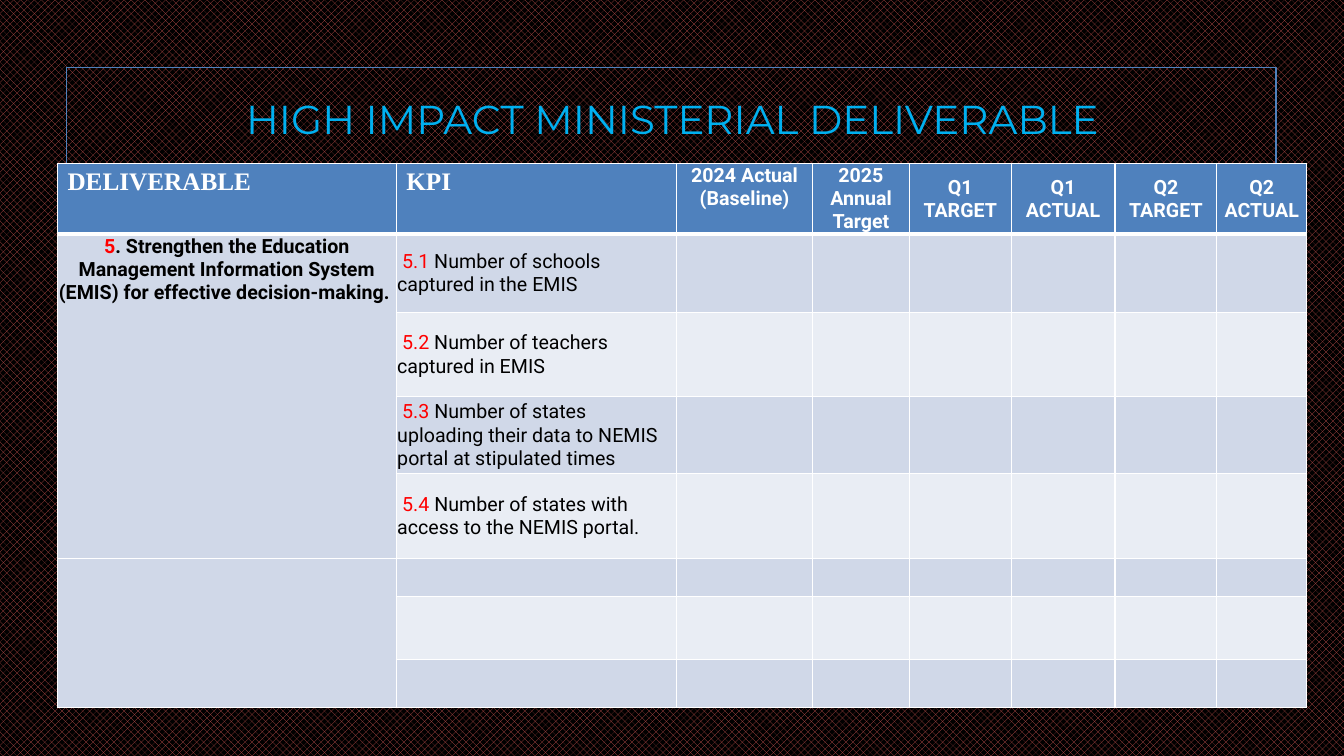
from lxml.etree import SubElement
from pptx import Presentation
from pptx.dml.color import RGBColor
from pptx.enum.dml import MSO_PATTERN
from pptx.enum.shapes import MSO_SHAPE
from pptx.enum.text import MSO_ANCHOR, PP_ALIGN
from pptx.oxml.ns import qn
from pptx.util import Inches, Pt

BLUE, WHITE, BLACK, RED = "4F81BD", "FFFFFF", "000000", "FF0000"
BANDS = ["E9EDF4", "D0D8E8"]
COLUMN_WIDTHS = [3.36, 2.78, 1.35, 0.96, 1.01, 1.03, 1.01, 0.89]
ROW_HEIGHTS = [0.7, 0.78, 0.83, 0.77, 0.84, 0.38, 0.62, 0.48]
MAIN_HEADINGS = ["DELIVERABLE", "KPI"]
PERIOD_HEADINGS = ["2024 Actual (Baseline)", "2025 Annual Target",
                   "Q1 TARGET", "Q1 ACTUAL", "Q2 TARGET", "Q2 ACTUAL"]
KPIS = [
    ("5.1", " Number of schools captured in the EMIS"),
    ("5.2", " Number of teachers captured in EMIS"),
    ("5.3 ", "Number of states uploading their data to NEMIS portal at stipulated times"),
    ("5.4 ", "Number of states with access to the NEMIS portal."),
]


def color(value):
    return RGBColor.from_string(value)


def add_run(paragraph, text, size, font, tint, bold=False):
    run = paragraph.add_run()
    run.text = text
    run.font.size = Pt(size)
    run.font.name = font
    run.font.bold = bold
    run.font.color.rgb = color(tint)


def paint_background(slide):
    fill = slide.background.fill
    fill.patterned()
    fill.pattern = MSO_PATTERN.PERCENT_50
    fill.fore_color.rgb = color("C0504D")
    fill.back_color.rgb = color(BLACK)


def add_frame(slide):
    frame = slide.shapes.add_shape(MSO_SHAPE.RECTANGLE, Inches(0.66), Inches(0.67),
                                   Inches(12), Inches(6.17))
    frame.shadow.inherit = False
    frame.fill.background()
    frame.line.color.rgb = color(BLUE)
    frame.line.width = Pt(1.25)


def set_title(slide, text):
    title = slide.shapes.title
    title.left, title.top = Inches(1.42), Inches(0.73)
    title.width, title.height = Inches(10.5), Inches(0.89)
    title.text_frame.vertical_anchor = MSO_ANCHOR.MIDDLE
    paragraph = title.text_frame.paragraphs[0]
    paragraph.alignment = PP_ALIGN.CENTER
    add_run(paragraph, text, 28.8, "Montserrat", "00B0F0")


def set_borders(cell, bottom):
    properties = cell._tc.get_or_add_tcPr()
    for side, width in (("lnL", 1), ("lnR", 1), ("lnT", 1), ("lnB", bottom)):
        line = SubElement(properties, qn(f"a:{side}"), w=str(Pt(width)))
        fill = SubElement(line, qn("a:solidFill"))
        SubElement(fill, qn("a:srgbClr"), val=WHITE)


def tighten(cell):
    cell.margin_left = cell.margin_right = cell.margin_top = Inches(0.01)
    cell.margin_bottom = 0


def fill_cell(cell, runs, size=14, font="Roboto", bold=False,
              align=PP_ALIGN.LEFT, anchor=MSO_ANCHOR.MIDDLE):
    cell.vertical_anchor = anchor
    paragraph = cell.text_frame.paragraphs[0]
    paragraph.alignment = align
    for text, tint in runs:
        add_run(paragraph, text, size, font, tint, bold)


def add_grid(slide):
    grid = slide.shapes.add_table(
        len(ROW_HEIGHTS), len(COLUMN_WIDTHS), Inches(0.57), Inches(1.62),
        Inches(sum(COLUMN_WIDTHS)), Inches(sum(ROW_HEIGHTS))).table
    for column, width in zip(grid.columns, COLUMN_WIDTHS):
        column.width = Inches(width)
    for index, (row, height) in enumerate(zip(grid.rows, ROW_HEIGHTS)):
        row.height = Inches(height)
        for position, cell in enumerate(row.cells):
            set_borders(cell, 1 if index else 3)
            cell.fill.solid()
            band = BANDS[1] if position == 0 else BANDS[index % 2]
            cell.fill.fore_color.rgb = color(band if index else BLUE)
            if index or position >= len(MAIN_HEADINGS):
                tighten(cell)
    grid.cell(1, 0).merge(grid.cell(4, 0))
    grid.cell(5, 0).merge(grid.cell(7, 0))
    return grid


def fill_grid(grid):
    for column, heading in enumerate(MAIN_HEADINGS):
        fill_cell(grid.cell(0, column), [(heading, WHITE)], 18, "Times New Roman",
                  True, anchor=MSO_ANCHOR.TOP)
    for column, heading in enumerate(PERIOD_HEADINGS, len(MAIN_HEADINGS)):
        anchor = MSO_ANCHOR.MIDDLE if heading.startswith("Q") else MSO_ANCHOR.TOP
        fill_cell(grid.cell(0, column), [(heading, WHITE)], bold=True,
                  align=PP_ALIGN.CENTER, anchor=anchor)
    deliverable = (". Strengthen the Education Management Information System "
                   "(EMIS) for effective decision-making. ")
    fill_cell(grid.cell(1, 0), [("5", RED), (deliverable, BLACK)], bold=True,
              align=PP_ALIGN.CENTER, anchor=MSO_ANCHOR.TOP)
    for row, (number, kpi) in enumerate(KPIS, 1):
        fill_cell(grid.cell(row, 1), [(" ", BLACK), (number, RED), (kpi, BLACK)])


def main():
    deck = Presentation()
    deck.slide_width, deck.slide_height = Inches(13.33), Inches(7.5)
    slide = deck.slides.add_slide(deck.slide_layouts[5])
    paint_background(slide)
    add_frame(slide)
    set_title(slide, "HIGH IMPACT MINISTERIAL DELIVERABLE")
    fill_grid(add_grid(slide))
    deck.save("out.pptx")


if __name__ == "__main__":
    main()
